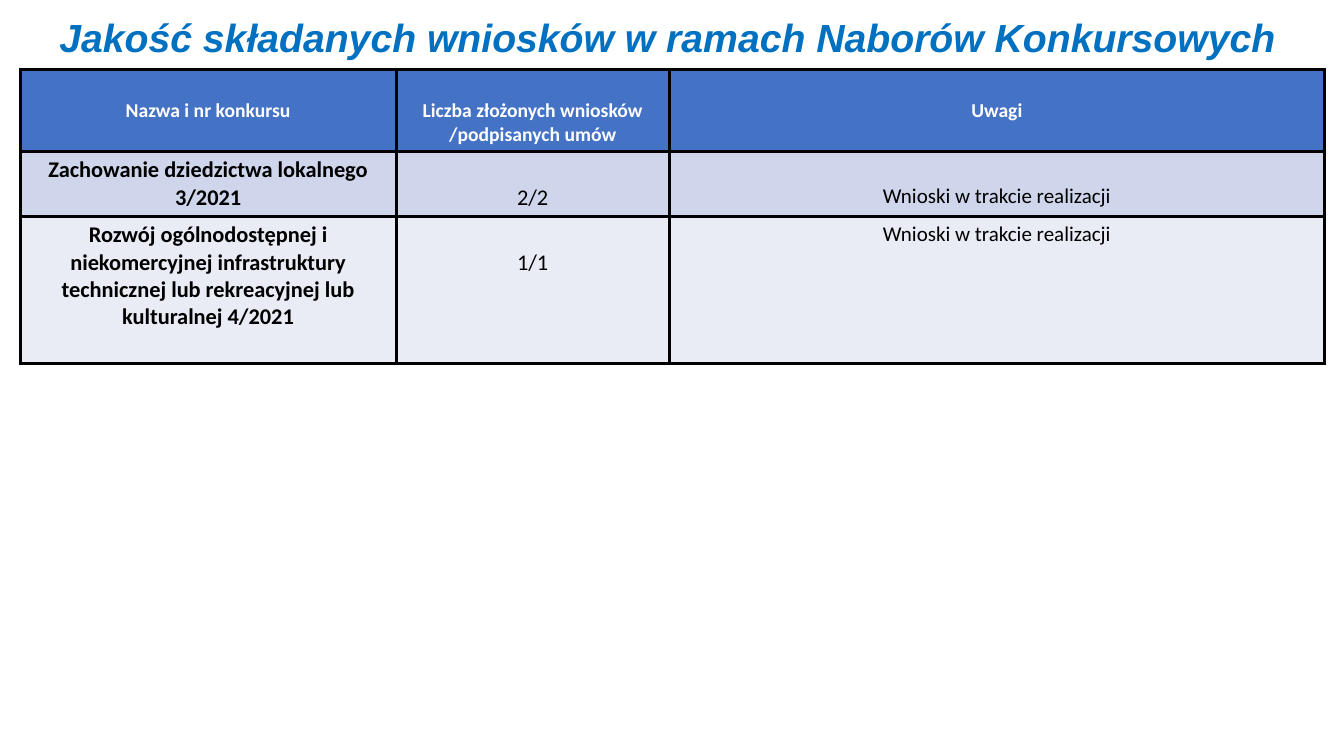
import pptx
import pptx.dml.color
import pptx.enum.text
import pptx.oxml
import pptx.oxml.ns
import pptx.util

Pt = pptx.util.Pt
COLOURS = {
    "title": "0070C0",
    "header": "4472C4",
    "header_text": "FFFFFF",
    "odd_row": "CFD5EA",
    "even_row": "E9EBF5",
    "text": "000000",
    "border": "000000",
}
COLUMN_WIDTHS = [268.6, 195.1, 468]
ROW_HEIGHTS = [58.5, 46.4, 105]
ROW_FILLS = ["header", "odd_row", "even_row"]
MARGIN = 3.6
HEADER_LINE = 17.1
BODY_LINE = 19.5

# Each cell: wording, font size, bold, space above the text
CONTESTS = [
    [
        ("Nazwa i nr konkursu", 14, True, HEADER_LINE),
        ("Liczba złożonych wniosków /podpisanych umów", 14, True, HEADER_LINE),
        ("Uwagi", 14, True, HEADER_LINE),
    ],
    [
        ("Zachowanie dziedzictwa lokalnego 3/2021", 16, True, 0),
        ("2/2", 16, False, BODY_LINE),
        ("Wnioski w trakcie realizacji", 15, False, BODY_LINE),
    ],
    [
        ("Rozwój ogólnodostępnej i niekomercyjnej infrastruktury "
         "technicznej lub rekreacyjnej lub kulturalnej 4/2021", 16, True, 0),
        ("1/1", 16, False, BODY_LINE),
        ("Wnioski w trakcie realizacji", 15, False, 0),
    ],
]


class SlideBuilder:
    def __init__(self, slide):
        self.slide = slide

    def style(self, paragraph, font_name, size, colour, bold, italic=False):
        paragraph.alignment = pptx.enum.text.PP_ALIGN.CENTER
        font = paragraph.font
        font.name, font.size = font_name, Pt(size)
        font.bold, font.italic = bold, italic
        font.color.rgb = pptx.dml.color.RGBColor.from_string(COLOURS[colour])

    def title(self, wording, left, top, width, height):
        heading = self.slide.shapes.title
        heading.left, heading.top = Pt(left), Pt(top)
        heading.width, heading.height = Pt(width), Pt(height)
        frame = heading.text_frame
        frame.text = wording
        frame.word_wrap = True
        frame.auto_size = pptx.enum.text.MSO_AUTO_SIZE.NONE
        frame.vertical_anchor = pptx.enum.text.MSO_ANCHOR.TOP
        frame.margin_top = Pt(15.7)
        frame.margin_bottom = 0
        self.style(frame.paragraphs[0], "Arial", 28, "title", True, True)

    def border(self, cell, width):
        """Draw all four sides; they must precede the fill in the cell's XML."""
        properties = cell._tc.get_or_add_tcPr()
        for index, side in enumerate(("lnL", "lnR", "lnT", "lnB")):
            properties.insert(index, pptx.oxml.parse_xml(
                f'<a:{side} {pptx.oxml.ns.nsdecls("a")} w="{Pt(width)}">'
                f'<a:solidFill><a:srgbClr val="{COLOURS["border"]}"/></a:solidFill>'
                f'</a:{side}>'))

    def cell(self, cell, fill, wording, size, bold, space_above):
        cell.text = wording
        cell.margin_top = Pt(MARGIN + space_above)
        cell.margin_bottom = Pt(MARGIN)
        cell.fill.solid()
        cell.fill.fore_color.rgb = pptx.dml.color.RGBColor.from_string(COLOURS[fill])
        colour = "header_text" if fill == "header" else "text"
        self.style(cell.text_frame.paragraphs[0], "Calibri", size, colour, bold)
        self.border(cell, 2.25)

    def table(self, rows, left, top):
        grid = self.slide.shapes.add_table(
            len(rows), len(COLUMN_WIDTHS), Pt(left), Pt(top),
            Pt(sum(COLUMN_WIDTHS)), Pt(sum(ROW_HEIGHTS))).table
        for column, width in zip(grid.columns, COLUMN_WIDTHS):
            column.width = Pt(width)
        for row, height, fill, contents in zip(grid.rows, ROW_HEIGHTS, ROW_FILLS, rows):
            row.height = Pt(height)
            for cell, content in zip(row.cells, contents):
                self.cell(cell, fill, *content)


def main():
    presentation = pptx.Presentation()
    presentation.slide_width, presentation.slide_height = Pt(960), Pt(540)
    title_only = presentation.slide_layouts[5]
    builder = SlideBuilder(presentation.slides.add_slide(title_only))
    builder.table(CONTESTS, 14.4, 49.7)
    builder.title("Jakość składanych wniosków w ramach Naborów Konkursowych",
                  -15.1, -6.5, 983.5, 51)
    presentation.save("out.pptx")


if __name__ == "__main__":
    main()
